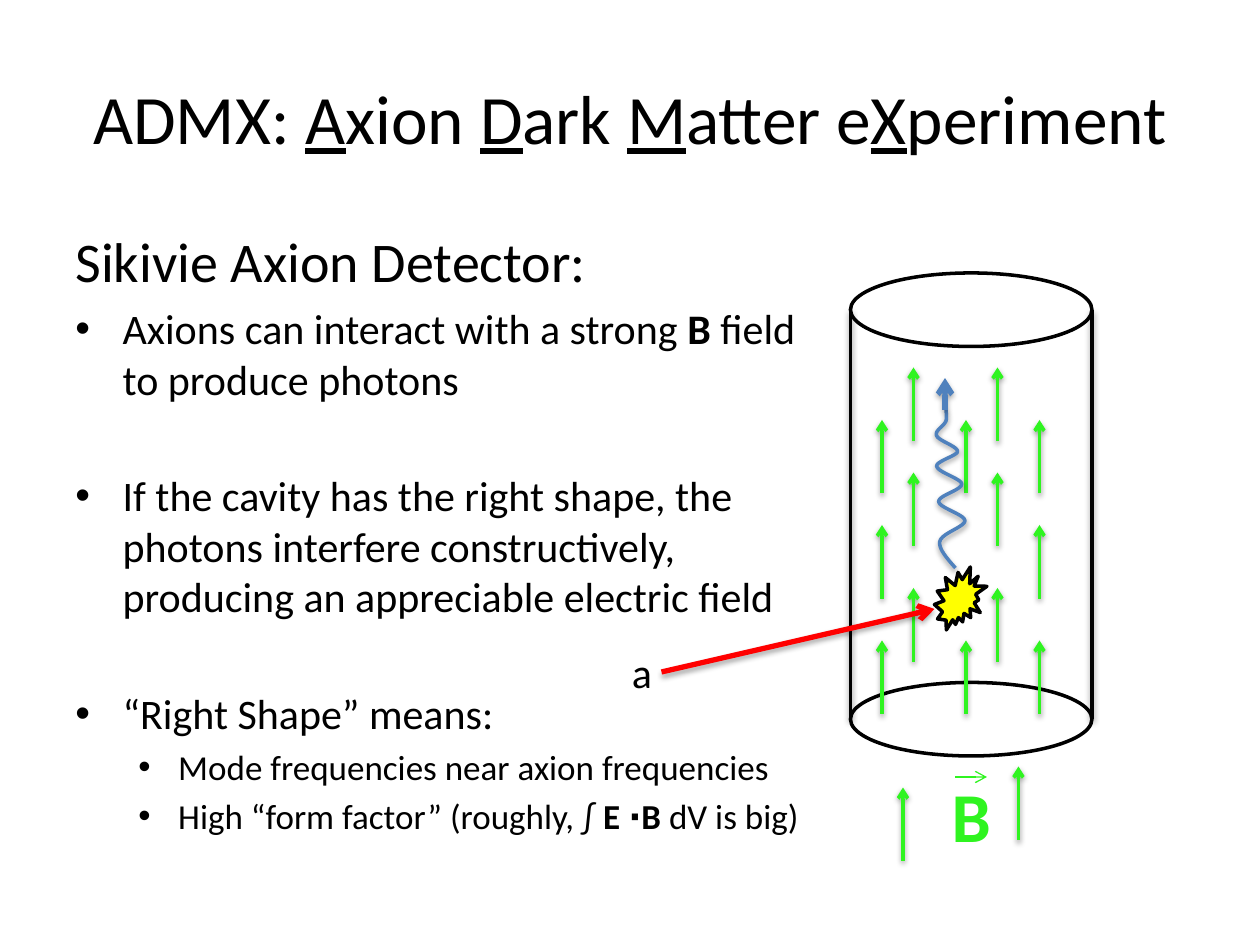
from lxml import etree
from pptx import Presentation
from pptx import util as u
from pptx.dml import color
from pptx.enum import shapes, text
from pptx.oxml import ns

PX = 7620
COLORS = {"ink": "000000", "paper": "FFFFFF", "field": "2FF420", "axion": "FF0000",
          "burst": "FFFF00", "photon": "4F81BD", "halo": "FEFEFE"}


def rgb(name):
    return color.RGBColor.from_string(COLORS[name])


def add_xml(parent, tag, **attributes):
    return etree.SubElement(parent, ns.qn(tag), attributes)


class Sketch:
    """Draws the parts of a physics slide in one style, with lengths in px."""

    font = "Calibri"

    def __init__(self, slide):
        self.slide = slide

    def textbox(self, left, top, width, height, anchor=text.MSO_ANCHOR.TOP):
        frame = self.slide.shapes.add_textbox(
            *(u.Emu(n * PX) for n in (left, top, width, height))).text_frame
        frame.word_wrap = True
        frame.vertical_anchor = anchor
        return frame

    def add_words(self, paragraph, words, size, ink="ink", mark="bold",
                  align=text.PP_ALIGN.LEFT, before=0):
        paragraph.alignment = align
        paragraph.space_before = u.Pt(before)
        for i, part in enumerate(words.split("|")):
            if not part:
                continue
            run = paragraph.add_run()
            run.text = part
            run.font.name, run.font.size = self.font, u.Pt(size)
            run.font.color.rgb = rgb(ink)
            if i % 2:
                setattr(run.font, mark, True)

    def indent(self, paragraph, margin, hang, bullet=True):
        props = paragraph._p.get_or_add_pPr()
        props.set("marL", str(margin * PX))
        props.set("indent", str(-hang * PX))
        if bullet:
            add_xml(props, "a:buFont", typeface="Arial")
            add_xml(props, "a:buChar", char="•")
        else:
            add_xml(props, "a:buNone")

    def halo(self, run, width):
        outline = etree.Element(ns.qn("a:ln"), w=str(u.Pt(width)))
        add_xml(add_xml(outline, "a:solidFill"), "a:srgbClr", val=COLORS["halo"])
        run._r.get_or_add_rPr().insert(0, outline)

    def effects(self, shape, weight, shadow=True):
        holder = add_xml(shape._element.spPr, "a:effectLst")
        if shadow:
            heavy = weight > 2
            drop = add_xml(holder, "a:outerShdw", blurRad="40000",
                           dist="23000" if heavy else "20000", dir="5400000", rotWithShape="0")
            black = add_xml(drop, "a:srgbClr", val=COLORS["ink"])
            add_xml(black, "a:alpha", val="35000" if heavy else "38000")

    def shape(self, kind, left, top, width, height, fill):
        shape = self.slide.shapes.add_shape(
            kind, *(u.Emu(n * PX) for n in (left, top, width, height)))
        shape.shadow.inherit = False
        shape.fill.solid()
        shape.fill.fore_color.rgb = rgb(fill)
        shape.line.color.rgb = rgb("ink")
        shape.line.width = u.Pt(2)

    def line(self, start, end, ink, weight=2, arrow=True, shadow=True):
        line = self.slide.shapes.add_connector(
            shapes.MSO_CONNECTOR.STRAIGHT, *(u.Emu(n * PX) for n in (*start, *end)))
        line.line.color.rgb = rgb(ink)
        line.line.width = u.Pt(weight)
        if arrow:
            add_xml(line._element.spPr.get_or_add_ln(), "a:tailEnd", type="arrow")
        self.effects(line, weight, shadow)

    def curve(self, start, beziers, ink, steps=10):
        points, origin = [], start
        for a, b, end in beziers:
            for t in (i / steps for i in range(1, steps + 1)):
                points.append(tuple(
                    PX * ((1 - t) ** 3 * p + 3 * t * (1 - t) ** 2 * q
                          + 3 * t * t * (1 - t) * r + t ** 3 * s)
                    for p, q, r, s in zip(origin, a, b, end)))
            origin = end
        builder = self.slide.shapes.build_freeform(start[0] * PX, start[1] * PX)
        builder.add_line_segments(points, close=False)
        wave = builder.convert_to_shape()
        wave.fill.background()
        wave.line.color.rgb = rgb(ink)
        wave.line.width = u.Pt(2)
        self.effects(wave, 2)


FIELD_COLUMNS = {840: (470, 570, 680), 870: (420, 520, 630), 920: (470, 680),
                 950: (420, 520, 630), 990: (470, 570, 680), 860: (820,), 970: (800,)}
FIELD_LENGTH = 70
POINTS = [
    ("Axions can interact with a strong |B |field to produce photons", 5),
    ("If the cavity has the right shape, the photons interfere constructively, "
     "producing an appreciable electric field", 38),
    ("“Right Shape” means:", 38),
]
CONDITIONS = ["Mode frequencies near axion frequencies",
              "High “form factor” (roughly, ∫| E ⋅B |dV is big)"]
PHOTON_START = (910, 541)
PHOTON_WAVE = [
    ((902, 532), (894, 523), (895, 516)),
    ((896, 508), (919, 502), (919, 496)),
    ((919, 490), (895, 484), (894, 478)),
    ((893, 472), (916, 467), (916, 461)),
    ((916, 456), (893, 450), (892, 444)),
    ((892, 439), (912, 434), (912, 430)),
    ((912, 425), (894, 420), (892, 415)),
    ((890, 410), (899, 406), (901, 401)),
    ((902, 397), (901, 392), (901, 390)),
]


def main():
    deck = Presentation()
    deck.slide_width, deck.slide_height = u.Emu(1200 * PX), u.Emu(900 * PX)
    sketch = Sketch(deck.slides.add_slide(deck.slide_layouts[6]))
    center = text.PP_ALIGN.CENTER

    title = sketch.textbox(60, 36, 1080, 150, text.MSO_ANCHOR.MIDDLE)
    sketch.add_words(title.paragraphs[0], "ADMX: |A|xion |D|ark |M|atter e|X|periment",
                     39.6, mark="underline", align=center)

    body = sketch.textbox(60, 210, 720, 660)
    heading = body.paragraphs[0]
    sketch.add_words(heading, "Sikivie Axion Detector:", 32)
    sketch.indent(heading, 45, 45, bullet=False)
    for words, before in POINTS:
        point = body.add_paragraph()
        sketch.add_words(point, words, 24, before=before)
        sketch.indent(point, 45, 45)
    for words in CONDITIONS:
        condition = body.add_paragraph()
        condition.level = 1
        sketch.add_words(condition, words, 20, before=4)
        sketch.indent(condition, 98, 38)

    for rim in (260, 650):
        sketch.shape(shapes.MSO_SHAPE.OVAL, 810, rim, 230, 70, "paper")
    for wall in (810, 1040):
        sketch.line((wall, 295), (wall, 685), "ink", arrow=False)
    for x, bottoms in FIELD_COLUMNS.items():
        for bottom in bottoms:
            sketch.line((x, bottom), (x, bottom - FIELD_LENGTH), "field")

    axion = sketch.textbox(590, 610, 40, 60)
    sketch.add_words(axion.paragraphs[0], "a", 24)
    sketch.line((630, 640), (890, 580), "axion", weight=3)
    sketch.shape(shapes.MSO_SHAPE.EXPLOSION2, 890, 540, 50, 60, "burst")
    sketch.curve(PHOTON_START, PHOTON_WAVE, "photon")
    sketch.line((900, 390), (900, 360), "photon", weight=3)

    field = sketch.textbox(890, 730, 70, 92)
    sketch.add_words(field.paragraphs[0], "|B", 40, ink="field", align=center)
    sketch.halo(field.paragraphs[0].runs[0], 1.5)
    sketch.line((910, 740), (940, 740), "field", weight=0.75, shadow=False)

    deck.save("out.pptx")


if __name__ == "__main__":
    main()
